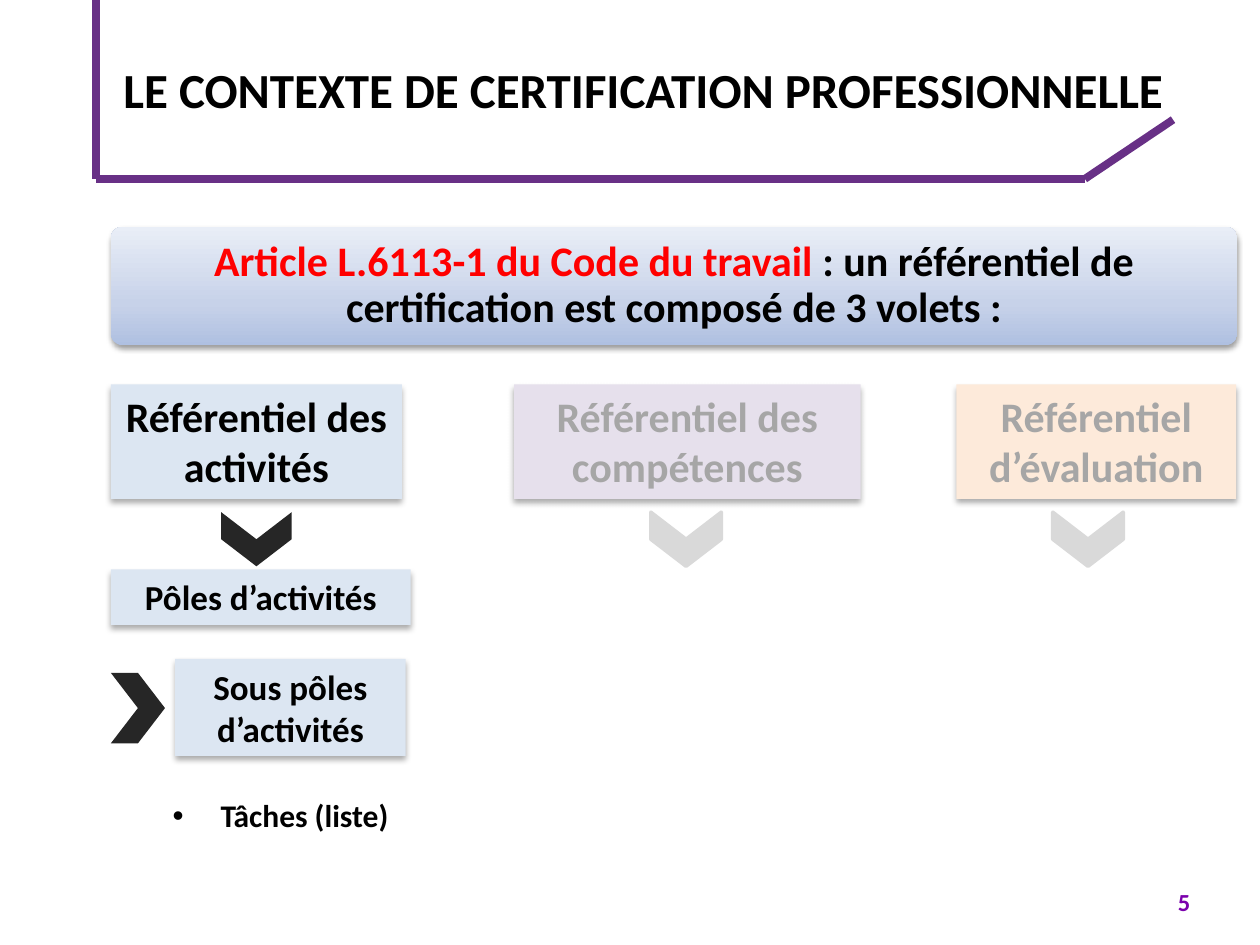
"""Build the slide on the three parts of a professional certification framework."""
from dataclasses import dataclass

from lxml import etree
from pptx import Presentation, util as u
from pptx.dml.color import RGBColor
from pptx.enum import shapes, text
from pptx.oxml import ns


@dataclass(frozen=True)
class Theme:
    font: str = "Calibri"
    ink: str = "000000"
    muted: str = "A6A6A6"
    accent: str = "FF0000"
    frame: str = "683086"
    number: str = "7B00AC"
    blue: str = "DCE6F2"
    violet: str = "E6E0EC"
    orange: str = "FDEADA"
    dark: str = "262626"
    pale: str = "D9D9D9"
    gradient: tuple = ((0, "AFC0E1"), (0.35, "C7D2E9"), (1, "E9EEF7"))
    title: int = 28
    heading: int = 24
    label: int = 20
    item: int = 18
    small: int = 14


@dataclass(frozen=True)
class Area:
    """Columns and rows on a grid of 100 by 75 square cells."""
    left: float
    top: float
    width: float
    height: float


@dataclass(frozen=True)
class Card:
    words: str
    area: Area
    fill: str
    size: int
    color: str


@dataclass(frozen=True)
class Chevron:
    left: float
    top: float
    fill: str
    rotation: int = 90
    outlined: bool = False


THEME = Theme()
MARGIN = 8.8
VOLET_TOP, VOLET_HEIGHT, ARROW_TOP = 30.5, 9.1, 40

CARDS = (
    Card("Référentiel des activités", Area(MARGIN, VOLET_TOP, 23.1, VOLET_HEIGHT),
         THEME.blue, THEME.heading, THEME.ink),
    Card("Référentiel des compétences", Area(40.8, VOLET_TOP, 27.5, VOLET_HEIGHT),
         THEME.violet, THEME.heading, THEME.muted),
    Card("Référentiel d’évaluation", Area(75.9, VOLET_TOP, 22.2, VOLET_HEIGHT),
         THEME.orange, THEME.heading, THEME.muted),
    Card("Pôles d’activités", Area(MARGIN, 45.2, 23.8, 4.4),
         THEME.blue, THEME.label, THEME.ink),
    Card("Sous pôles d’activités", Area(13.9, 52.3, 18.3, 7.7),
         THEME.blue, THEME.label, THEME.ink),
)
CHEVRONS = (
    Chevron(18.2, ARROW_TOP, THEME.dark),
    Chevron(52.3, ARROW_TOP, THEME.pale, outlined=True),
    Chevron(84.2, ARROW_TOP, THEME.pale, outlined=True),
    Chevron(MARGIN, 53.4, THEME.dark, rotation=0),
)
FRAME = ((7.6, 0), (7.6, 14.2), (86.1, 14.2), (93.1, 9.5))


def cells(count: float) -> int:
    return u.Inches(count / 10)


def place(box, area: Area) -> None:
    box.left, box.top = cells(area.left), cells(area.top)
    box.width, box.height = cells(area.width), cells(area.height)


def add_span(para, words: str, size: int, color: str) -> None:
    span = para.add_run()
    span.text = words
    span.font.name, span.font.size, span.font.bold = THEME.font, u.Pt(size), True
    span.font.color.rgb = RGBColor.from_string(color)


def add_box(page, kind, area: Area):
    box = page.shapes.add_shape(kind, *map(cells, (area.left, area.top, area.width, area.height)))
    box.shadow.inherit = False
    box.line.fill.background()
    return box


def paint(box, color: str) -> None:
    box.fill.solid()
    box.fill.fore_color.rgb = RGBColor.from_string(color)


def add_shadow(box, opacity: int, blur: float, distance: float) -> None:
    effects = box.element.spPr.find(ns.qn("a:effectLst"))
    shadow = etree.SubElement(effects, ns.qn("a:outerShdw"), blurRad=str(u.Pt(blur)),
                              dist=str(u.Pt(distance)), dir="5400000", rotWithShape="0")
    color = etree.SubElement(shadow, ns.qn("a:srgbClr"), val="000000")
    etree.SubElement(color, ns.qn("a:alpha"), val=str(opacity * 1000))


def add_frame(page) -> None:
    for start, end in zip(FRAME, FRAME[1:]):
        line = page.shapes.add_connector(shapes.MSO_CONNECTOR.STRAIGHT, *map(cells, start + end))
        line.line.color.rgb = RGBColor.from_string(THEME.frame)
        line.line.width = u.Pt(4.5)
        etree.SubElement(line.element.spPr, ns.qn("a:effectLst"))


def add_title(page) -> None:
    box = page.shapes.title
    place(box, Area(MARGIN, 0, 86.2, 14.1))
    box.text_frame.vertical_anchor = text.MSO_ANCHOR.MIDDLE
    para = box.text_frame.paragraphs[0]
    para.alignment = text.PP_ALIGN.LEFT
    add_span(para, "LE CONTEXTE DE CERTIFICATION PROFESSIONNELLE", THEME.title, THEME.ink)


def add_banner(page) -> None:
    box = add_box(page, shapes.MSO_SHAPE.ROUNDED_RECTANGLE, Area(MARGIN, 18, 89.4, 9.4))
    box.adjustments[0] = 0.1
    box.fill.gradient()
    box.fill.gradient_angle = 90
    stops = box.element.spPr.find(".//" + ns.qn("a:gsLst"))
    stops.clear()
    for position, color in THEME.gradient:
        stop = etree.SubElement(stops, ns.qn("a:gs"), pos=str(int(position * 100000)))
        etree.SubElement(stop, ns.qn("a:srgbClr"), val=color)
    add_shadow(box, 38, 3.1, 1.6)
    frame = box.text_frame
    frame.word_wrap = True
    frame.margin_left = frame.margin_right = cells(1.3)
    para = frame.paragraphs[0]
    para.alignment, para.line_spacing = text.PP_ALIGN.CENTER, 0.9
    add_span(para, "Article L.6113-1 du Code du travail ", THEME.heading, THEME.accent)
    add_span(para, ": un référentiel de certification est composé de 3 volets :",
             THEME.heading, THEME.ink)


def add_card(page, card: Card) -> None:
    box = add_box(page, shapes.MSO_SHAPE.RECTANGLE, card.area)
    paint(box, card.fill)
    add_shadow(box, 32, 3.5, 2.2)
    box.text_frame.word_wrap = True
    box.text_frame.vertical_anchor = text.MSO_ANCHOR.TOP
    para = box.text_frame.paragraphs[0]
    para.alignment = text.PP_ALIGN.CENTER
    add_span(para, card.words, card.size, card.color)


def add_chevron(page, chevron: Chevron) -> None:
    box = add_box(page, shapes.MSO_SHAPE.CHEVRON, Area(chevron.left, chevron.top, 4.3, 5.6))
    box.rotation = chevron.rotation
    paint(box, chevron.fill)
    if chevron.outlined:
        box.line.color.rgb = RGBColor.from_string(chevron.fill)
        box.line.width = u.Pt(2)


def add_tasks(page) -> None:
    box = page.placeholders[1]
    place(box, Area(12.7, 62.7, 25, 4))
    para = box.text_frame.paragraphs[0]
    properties = para._p.get_or_add_pPr()
    indent = cells(3.8)
    properties.set("marL", str(indent))
    properties.set("indent", str(-indent))
    etree.SubElement(properties, ns.qn("a:buFont"), typeface="Arial")
    etree.SubElement(properties, ns.qn("a:buChar"), char="•")
    para.space_before = u.Pt(0)
    add_span(para, "Tâches (liste)", THEME.item, THEME.ink)


def add_page_number(page) -> None:
    box = page.shapes.add_textbox(*map(cells, (92.5, 69.9, 6.7, 4)))
    box.text_frame.word_wrap = True
    add_span(box.text_frame.paragraphs[0], "5", THEME.small, THEME.number)


def main() -> None:
    deck = Presentation()
    deck.slide_width, deck.slide_height = cells(100), cells(75)
    page = deck.slides.add_slide(deck.slide_layouts[1])
    add_frame(page)
    add_title(page)
    add_banner(page)
    for card in CARDS:
        add_card(page, card)
    for chevron in CHEVRONS:
        add_chevron(page, chevron)
    add_tasks(page)
    add_page_number(page)
    deck.save("out.pptx")


if __name__ == "__main__":
    main()
